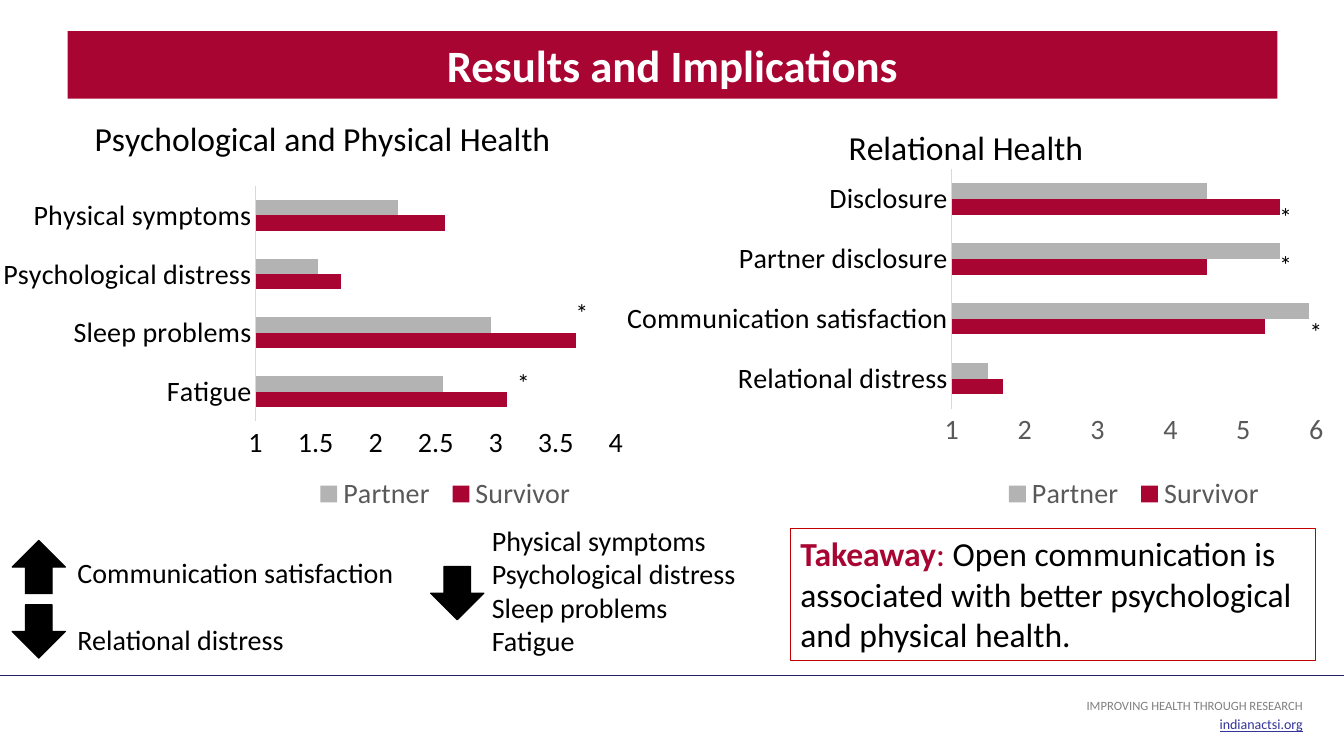
from lxml import etree
from pptx import Presentation
from pptx.chart.data import CategoryChartData
from pptx.dml.color import RGBColor
from pptx.enum.chart import XL_CHART_TYPE, XL_LEGEND_POSITION, XL_TICK_MARK
from pptx.enum.shapes import MSO_CONNECTOR, MSO_SHAPE
from pptx.enum.text import MSO_ANCHOR, PP_ALIGN
from pptx.oxml.ns import qn
from pptx.util import Inches, Pt

BARS = XL_CHART_TYPE.BAR_CLUSTERED
BOTTOM = XL_LEGEND_POSITION.BOTTOM
NO_TICK = XL_TICK_MARK.NONE
LINE = MSO_CONNECTOR.STRAIGHT
RECT, ARROW = MSO_SHAPE.RECTANGLE, MSO_SHAPE.DOWN_ARROW
TOP, MIDDLE = MSO_ANCHOR.TOP, MSO_ANCHOR.MIDDLE
LEFT, CENTER, RIGHT = PP_ALIGN.LEFT, PP_ALIGN.CENTER, PP_ALIGN.RIGHT

FONT = "Calibri"
CRIMSON = RGBColor(0xA9, 0x05, 0x33)
RED = RGBColor(0xC0, 0x00, 0x00)
SILVER = RGBColor(0xB3, 0xB3, 0xB3)
PALE = RGBColor(0xD9, 0xD9, 0xD9)
GRAY = RGBColor(0x80, 0x80, 0x80)
DARK = RGBColor(0x59, 0x59, 0x59)
NAVY = RGBColor(0x22, 0x22, 0x67)
BLUE = RGBColor(0x33, 0x33, 0x99)
BLACK = RGBColor(0, 0, 0)
WHITE = RGBColor(0xFF, 0xFF, 0xFF)


def style(font, size, color, bold=False):
    font.name, font.size, font.bold = FONT, Pt(size), bold
    font.color.rgb = color


def write(shape, text, size, color, align=LEFT, bold=False, tight=False):
    frame = shape.text_frame
    frame.word_wrap = True
    if tight:
        frame.margin_left = frame.margin_right = Inches(0.02)
        frame.margin_top = frame.margin_bottom = Inches(0.01)
    frame.text = text
    for para in frame.paragraphs:
        para.alignment = align
        for run in para.runs:
            style(run.font, size, color, bold)
    return frame


def add_text(slide, box, text, size, color, **look):
    shape = slide.shapes.add_textbox(*map(Inches, box))
    return write(shape, text, size, color, **look)


def add_block(slide, kind, box, fill=None, line=None):
    shape = slide.shapes.add_shape(kind, *map(Inches, box))
    shape.shadow.inherit = False
    if fill is None:
        shape.fill.background()
    else:
        shape.fill.solid()
        shape.fill.fore_color.rgb = fill
    if line is None:
        shape.line.fill.background()
    else:
        shape.line.color.rgb = line
        shape.line.width = Pt(0.75)
    return shape


def place(part, index, x, y, w=None, h=None, inner=False):
    """Set a manual layout, in fractions of the chart frame."""
    for old in part.findall(qn("c:layout")):
        part.remove(old)
    layout = etree.Element(qn("c:layout"))
    manual = etree.SubElement(layout, qn("c:manualLayout"))
    items = [("layoutTarget", "inner")] if inner else []
    items += [("xMode", "edge"), ("yMode", "edge"), ("x", x), ("y", y)]
    if w:
        items += [("w", w), ("h", h)]
    for tag, val in items:
        etree.SubElement(manual, qn("c:" + tag)).set("val", str(val))
    part.insert(index, layout)


def add_bars(slide, box, title, cats, rows, top, step, color, spots):
    data = CategoryChartData()
    data.categories = cats
    for name, vals in rows.items():
        data.add_series(name, vals)
    chart = slide.shapes.add_chart(BARS, *map(Inches, box), data).chart
    style(chart.font, 20, BLACK)

    # Title and legend
    chart.has_title = True
    chart.chart_title.text_frame.text = title
    style(chart.chart_title.text_frame.paragraphs[0].runs[0].font, 24, BLACK)
    chart.has_legend = True
    chart.legend.position = BOTTOM
    chart.legend.include_in_layout = False
    style(chart.legend.font, 20, DARK)

    # Bars
    plot = chart.plots[0]
    plot.gap_width, plot.overlap = 182, 0
    plot.vary_by_categories = False
    for series, tint in zip(plot.series, (CRIMSON, SILVER)):
        series.format.fill.solid()
        series.format.fill.fore_color.rgb = tint

    # Axes
    cat, val = chart.category_axis, chart.value_axis
    for axis, tint in ((cat, BLACK), (val, color)):
        axis.major_tick_mark = axis.minor_tick_mark = NO_TICK
        axis.has_major_gridlines = False
        style(axis.tick_labels.font, 20, tint)
    cat.format.line.color.rgb = PALE
    cat.format.line.width = Pt(0.75)
    val.format.line.fill.background()
    val.minimum_scale, val.maximum_scale, val.major_unit = 1, top, step

    # Places inside the frame
    root = chart.plots[0].series[0].format.fill and chart.element
    place(root.find(".//" + qn("c:title")), 1, *spots["title"])
    place(root.find(".//" + qn("c:plotArea")), 0, *spots["plot"], inner=True)
    place(root.find(".//" + qn("c:legend")), 1, *spots["legend"])


def add_header(slide, box):
    bar = add_block(slide, RECT, box, CRIMSON)
    frame = write(bar, "Results and Implications", 32, WHITE, CENTER, True, True)
    frame.vertical_anchor = MIDDLE


def add_charts(slide):
    add_bars(slide, (-0.08, 1.01, 6.38, 4.17),
             "Psychological and Physical Health",
             ["Fatigue", "Sleep problems", "Psychological distress",
              "Physical symptoms"],
             {"Survivor": (3.09, 3.67, 1.71, 2.58),
              "Partner": (2.56, 2.96, 1.52, 2.19)}, 4, 0.5, BLACK,
             {"title": (0.15, 0.02), "plot": (0.41, 0.2, 0.56, 0.56),
              "legend": (0.49, 0.9, 0.43, 0.09)})
    add_bars(slide, (5.97, 1.01, 7.23, 4.17), "Relational Health",
             ["Relational distress", "Communication satisfaction",
              "Partner disclosure", "Disclosure"],
             {"Survivor": (1.7, 5.3, 4.5, 5.5),
              "Partner": (1.5, 5.9, 5.5, 4.5)}, 6, 1, DARK,
             {"title": (0.33, 0.04), "plot": (0.48, 0.16, 0.5, 0.57),
              "legend": (0.54, 0.9, 0.38, 0.09)})
    # Marks of significance
    for x, y in ((5.61, 2.9), (5.03, 3.59), (12.59, 1.95), (12.59, 2.42),
                 (12.89, 3.09)):
        add_text(slide, (x, y, 0.77, 0.4), "*", 18, BLACK)


def add_effects(slide, x, y):
    for dx, dy, turn in ((0, 0.22, 180), (0, 0.86, 0), (4.15, 0.48, 0)):
        arrow = add_block(slide, ARROW, (x + dx, y + dy, 0.53, 0.53),
                          BLACK, BLACK)
        arrow.rotation = turn
    ties = add_text(slide, (x + 0.55, y + 0.32, 3.54, 1.11),
                    "Communication satisfaction\nRelational distress", 20, BLACK)
    ties.paragraphs[1].space_before = Pt(24)
    add_text(slide, (x + 4.66, y, 2.91, 1.45),
             "Physical symptoms\nPsychological distress\nSleep problems\nFatigue",
             20, BLACK)


def add_takeaway(slide, box):
    frame = write(add_block(slide, RECT, box, line=RED), "Takeaway", 24,
                  CRIMSON, bold=True)
    frame.vertical_anchor = TOP
    for text, color in ((": ", CRIMSON),
                        ("Open communication is associated with better "
                         "psychological and physical health.", BLACK)):
        run = frame.paragraphs[0].add_run()
        run.text = text
        style(run.font, 24, color)


def add_footer(slide, y, right):
    rule = slide.shapes.add_connector(LINE, 0, Inches(y), Inches(13.33), Inches(y))
    rule.line.color.rgb = NAVY
    rule.line.width = Pt(0.75)
    etree.SubElement(rule.element.spPr, qn("a:effectLst"))
    add_text(slide, (right - 4.88, y + 0.21, 4.88, 0.17),
             "IMPROVING HEALTH THROUGH RESEARCH", 9, GRAY, align=RIGHT, tight=True)
    site = add_text(slide, (right - 1.6, y + 0.39, 1.6, 0.19),
                    "indianactsi.org", 10, BLUE, align=RIGHT, tight=True)
    site.paragraphs[0].runs[0].font.underline = True


def main():
    deck = Presentation()
    deck.slide_width, deck.slide_height = Inches(13.33), Inches(7.5)
    slide = deck.slides.add_slide(deck.slide_layouts[6])
    add_footer(slide, 6.7, 12.94)
    add_header(slide, (0.67, 0.31, 12, 0.67))
    add_takeaway(slide, (7.84, 5.24, 5.21, 1.31))
    add_charts(slide)
    add_effects(slide, 0.12, 5.14)
    deck.save("out.pptx")


if __name__ == "__main__":
    main()
